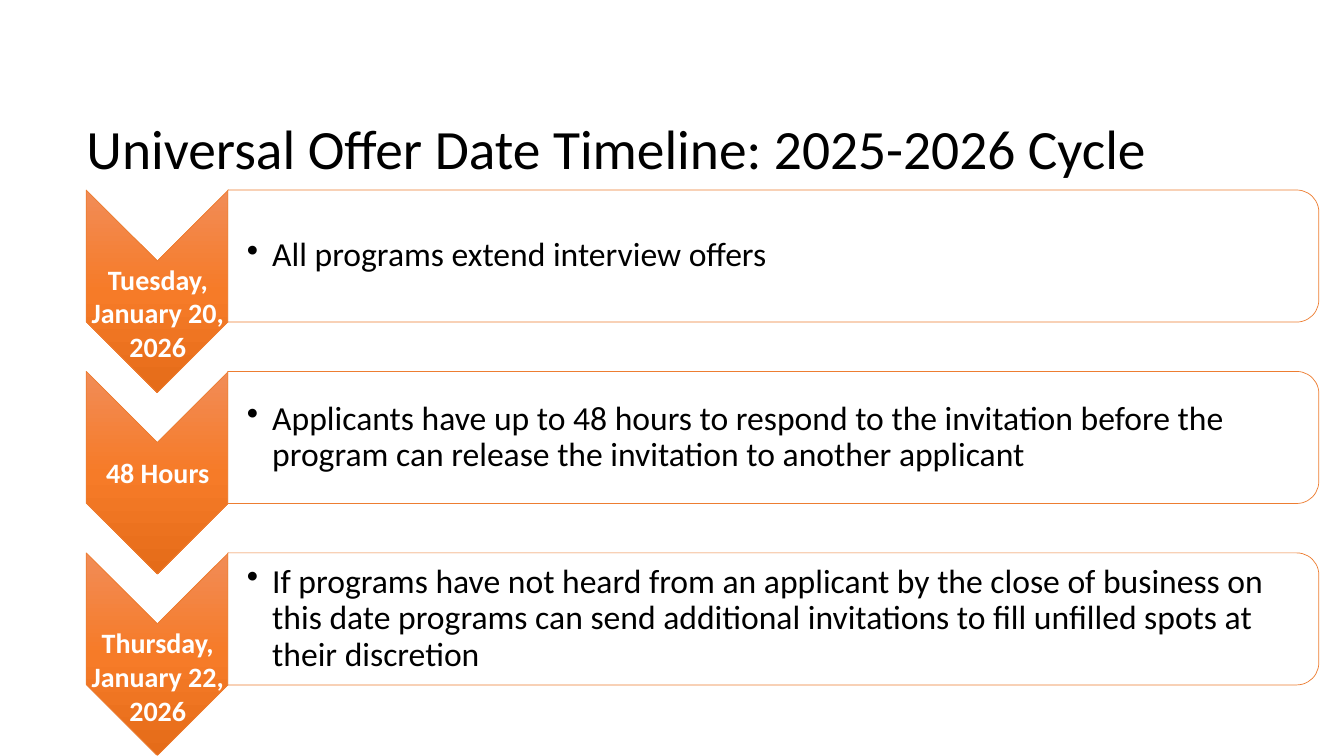
from pptx import Presentation
from pptx.dml.color import RGBColor
from pptx.enum.shapes import MSO_SHAPE
from pptx.enum.text import MSO_ANCHOR, PP_ALIGN
from pptx.oxml import parse_xml
from pptx.oxml.ns import nsdecls
from pptx.util import Inches, Pt

CHEVRON = MSO_SHAPE.CHEVRON
PANEL = MSO_SHAPE.ROUND_2_SAME_RECTANGLE
MIDDLE = MSO_ANCHOR.MIDDLE
CENTER = PP_ALIGN.CENTER
LEFT = PP_ALIGN.LEFT

ORANGE = RGBColor(0xED, 0x7D, 0x31)
LIGHT = RGBColor(0xF1, 0x8C, 0x57)
MID = RGBColor(0xF6, 0x7B, 0x28)
DARK = RGBColor(0xE5, 0x6C, 0x19)
WHITE = RGBColor(0xFF, 0xFF, 0xFF)
BLACK = RGBColor(0, 0, 0)

TOP, STEP = 1.89, 1.8
STEPS = [
    ("Tuesday, January 20, 2026", 0.91,
     "All programs extend interview offers"),
    ("48 Hours", 0.7,
     "Applicants have up to 48 hours to respond to the invitation before "
     "the program can release the invitation to another applicant"),
    ("Thursday, January 22, 2026", 0.92,
     "If programs have not heard from an applicant by the close of business "
     "on this date programs can send additional invitations to fill unfilled "
     "spots at their discretion"),
]

TITLE = {"size": Pt(39.6), "color": BLACK, "bold": False}
LABEL = {"size": Pt(20), "color": WHITE, "bold": True}
BODY = {"size": Pt(24), "color": BLACK, "bold": False}


def apply(target, values):
    for name, value in values.items():
        setattr(target, name, value)


def add_text(slide, box, text, style, pads, spacing=0.9, align=LEFT,
             bullet=False):
    frame = slide.shapes.add_textbox(*map(Inches, box)).text_frame
    sides = ("margin_left", "margin_top", "margin_right", "margin_bottom")
    apply(frame, {"word_wrap": True, "vertical_anchor": MIDDLE,
                  **dict(zip(sides, map(Inches, pads)))})
    para = frame.paragraphs[0]
    apply(para, {"alignment": align, "line_spacing": spacing})
    if bullet:
        props = para._p.get_or_add_pPr()
        props.set("marL", str(Inches(0.25)))
        props.set("indent", str(Inches(-0.25)))
        props.append(parse_xml(f'<a:buChar {nsdecls("a")} char="•"/>'))
    run = para.add_run()
    run.text = text
    font = run.font
    apply(font, {"name": "Calibri", "size": style["size"],
                 "bold": style["bold"]})
    font.color.rgb = style["color"]


def add_turned(slide, kind, middle, size):
    (x, y), (width, height) = middle, size
    shape = slide.shapes.add_shape(
        kind, Inches(x - width / 2), Inches(y - height / 2),
        Inches(width), Inches(height))
    shape.rotation = 90
    shape.shadow.inherit = False
    shape.line.color.rgb = ORANGE
    shape.line.width = Pt(0.5)
    return shape


def add_arrow(slide, top):
    shape = add_turned(slide, CHEVRON, (1.56, top + 1), (2.01, 1.41))
    stops = "".join(
        f'<a:gs pos="{spot}"><a:srgbClr val="{color}"/></a:gs>'
        for spot, color in ((0, LIGHT), (50000, MID), (100000, DARK)))
    shape._element.spPr.insert(2, parse_xml(
        f'<a:gradFill {nsdecls("a")} rotWithShape="0">'
        f'<a:gsLst>{stops}</a:gsLst>'
        '<a:lin ang="5400000" scaled="0"/></a:gradFill>'))


def add_panel(slide, top):
    shape = add_turned(slide, PANEL, (7.67, top + 0.65), (1.31, 10.82))
    shape.fill.solid()
    shape.fill.fore_color.rgb = WHITE
    color = shape._element.spPr.find(
        "{*}solidFill/{*}srgbClr")
    color.append(parse_xml(f'<a:alpha {nsdecls("a")} val="90000"/>'))


def main():
    deck = Presentation()
    deck.slide_width, deck.slide_height = Inches(13.33), Inches(7.5)
    slide = deck.slides.add_slide(deck.slide_layouts[6])
    for index, (label, drop, body) in enumerate(STEPS):
        top = TOP + index * STEP
        add_arrow(slide, top)
        add_text(slide, (0.86, top + drop, 1.41, 0.6), label, LABEL,
                 [0.01] * 4, spacing=1.0, align=CENTER)
        add_panel(slide, top)
        add_text(slide, (2.26, top + 0.06, 10.76, 1.18), body, BODY,
                 (0.19, 0.02, 0.02, 0.02), bullet=True)
    add_text(slide, (0.76, 1.12, 11.5, 0.77),
             "Universal Offer Date Timeline: 2025-2026 Cycle", TITLE,
             (0.1, 0.05, 0.1, 0.05))
    deck.save("out.pptx")


if __name__ == "__main__":
    main()
